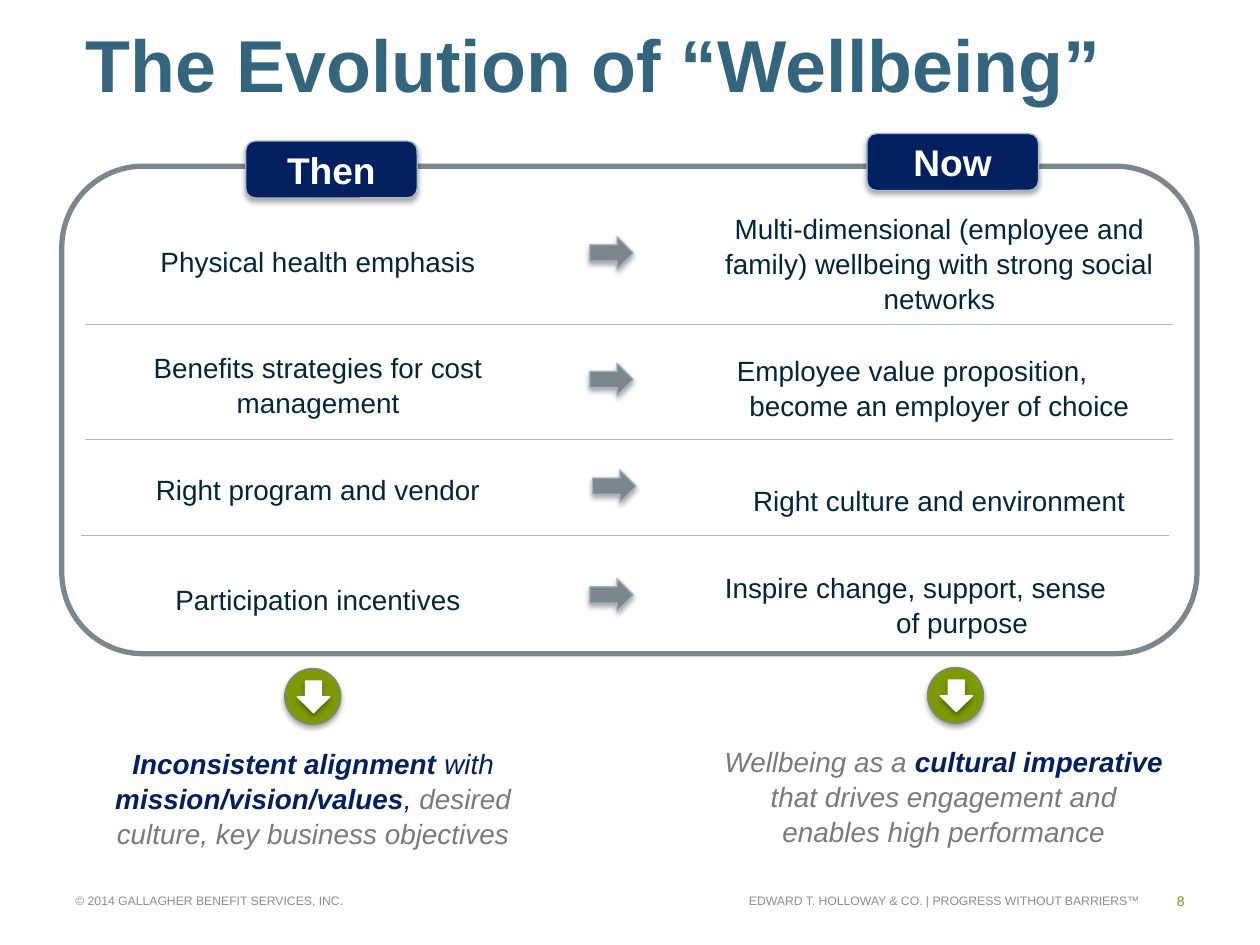
from lxml import etree
from pptx import Presentation
from pptx.dml.color import RGBColor
from pptx.enum.shapes import MSO_CONNECTOR, MSO_SHAPE
from pptx.enum.text import MSO_ANCHOR, PP_ALIGN
from pptx.oxml.ns import qn
from pptx.util import Pt

LEFT, CENTER, RIGHT = PP_ALIGN.LEFT, PP_ALIGN.CENTER, PP_ALIGN.RIGHT
TOP, MIDDLE = MSO_ANCHOR.TOP, MSO_ANCHOR.MIDDLE
ROUNDED, OVAL = MSO_SHAPE.ROUNDED_RECTANGLE, MSO_SHAPE.OVAL
DOWN_ARROW, RIGHT_ARROW = MSO_SHAPE.DOWN_ARROW, MSO_SHAPE.RIGHT_ARROW
STRAIGHT = MSO_CONNECTOR.STRAIGHT

NAVY, INK, GRAY, STEEL = "002060", "00263E", "7A7A7A", "7C868D"
TEAL, PALE, GREEN, WHITE = "34657F", "A6BBC9", "7C9A05", "FFFFFF"
FOOTER, PAGE_GREEN, ARROW_EDGE = "8C8E92", "799A05", "A1B7C5"


def color(value):
    return RGBColor.from_string(value)


class SlideBuilder:
    font = "Arial"
    body_size = 15.9
    body_spacing = 1.05

    def __init__(self, slide):
        self.slide = slide

    def style(self, font, size, value, bold=False, italic=False):
        font.name, font.size = self.font, Pt(size)
        font.color.rgb = color(value)
        font.bold, font.italic = bold, italic

    def frame(self, box, anchor=TOP):
        shape = self.slide.shapes.add_textbox(*map(Pt, box))
        text_frame = shape.text_frame
        text_frame.word_wrap = True
        text_frame.vertical_anchor = anchor
        return text_frame

    def label(self, box, text, size, value, align=LEFT):
        paragraph = self.frame(box, MIDDLE).paragraphs[0]
        paragraph.text = text
        paragraph.alignment = align
        self.style(paragraph.runs[0].font, size, value)

    def title(self, box, text):
        text_frame = self.frame(box, MIDDLE)
        text_frame.margin_left = Pt(4.3)
        text_frame.margin_right = text_frame.margin_top = text_frame.margin_bottom = 0
        text_frame.text = text
        self.style(text_frame.paragraphs[0].runs[0].font, 42, TEAL, bold=True)

    def column(self, box, entries):
        text_frame = self.frame(box)
        text_frame.text = "\n".join(entry[0] for entry in entries)
        for paragraph, (_, gap, left, right) in zip(text_frame.paragraphs, entries):
            properties = paragraph._p.get_or_add_pPr()
            properties.set("marL", str(Pt(left)))
            properties.set("marR", str(Pt(right)))
            paragraph.alignment = CENTER
            paragraph.line_spacing = self.body_spacing
            paragraph.space_before = Pt(gap)
            self.style(paragraph.runs[0].font, self.body_size, INK)

    def summary(self, box, runs):
        paragraph = self.frame(box).paragraphs[0]
        paragraph.alignment = CENTER
        paragraph.line_spacing = self.body_spacing
        for text, value, bold in runs:
            run = paragraph.add_run()
            run.text = text
            self.style(run.font, self.body_size, value, bold, italic=True)

    def shape(self, kind, box, fill, edge, width=0.75, shadow=True):
        shape = self.slide.shapes.add_shape(kind, *map(Pt, box))
        if fill:
            shape.fill.solid()
            shape.fill.fore_color.rgb = color(fill)
        else:
            shape.fill.background()
        shape.line.color.rgb = color(edge)
        shape.line.width = Pt(width)
        shape.shadow.inherit = False
        if shadow:
            self.drop_shadow(shape)
        return shape

    def drop_shadow(self, shape):
        effects = shape._element.spPr.find(qn("a:effectLst"))
        outer = etree.SubElement(effects, qn("a:outerShdw"), blurRad=str(Pt(3.1)),
                                 dist=str(Pt(1.8)), dir="5400000", rotWithShape="0")
        tint = etree.SubElement(outer, qn("a:srgbClr"), val="000000")
        etree.SubElement(tint, qn("a:alpha"), val="35000")

    def heading(self, left, top, text):
        shape = self.shape(ROUNDED, (left, top, 98, 32.5), NAVY, PALE)
        text_frame = shape.text_frame
        text_frame.margin_left = text_frame.margin_right = 0
        text_frame.vertical_anchor = MIDDLE
        text_frame.text = text
        text_frame.paragraphs[0].alignment = CENTER
        self.style(text_frame.paragraphs[0].runs[0].font, 21.2, WHITE, bold=True)

    def badge(self, left, top):
        self.shape(OVAL, (left, top, 32, 32), GREEN, STEEL)
        self.shape(DOWN_ARROW, (left + 7.2, top + 7.2, 18.5, 18), WHITE, WHITE)

    def divider(self, left, top):
        line = self.slide.shapes.add_connector(
            STRAIGHT, Pt(left), Pt(top), Pt(left + 622), Pt(top))
        line.line.color.rgb = color(PALE)
        line.line.width = Pt(0.5)
        etree.SubElement(line._element.spPr, qn("a:effectLst"))


def main():
    presentation = Presentation()
    presentation.slide_width, presentation.slide_height = Pt(720), Pt(540)
    builder = SlideBuilder(presentation.slides.add_slide(presentation.slide_layouts[6]))

    builder.title((44.6, 10, 647, 52.5), "The Evolution of “Wellbeing”")
    builder.shape(ROUNDED, (35.3, 95, 648.7, 278.6), None, STEEL, width=3, shadow=False)
    builder.heading(140.4, 80.6, "Then")
    builder.heading(495.4, 76.3, "Now")

    builder.column((37.4, 135.4, 288.7, 236), [
        ("Physical health emphasis", 0, 0, 0),
        ("Benefits strategies for cost management", 40.4, 0, 0),
        ("Right program and vendor", 29.8, 0, 0),
        ("Participation incentives", 42.6, 0, 0),
    ])
    builder.column((405.4, 116.6, 262.8, 266), [
        ("Multi-dimensional (employee and family) wellbeing with strong social networks", 0, 0, 0),
        ("Employee value proposition,", 21.2, 0, 31),
        ("become an employer of choice", 0, 0, 0),
        ("Right culture and environment", 34, 0, 0),
        ("Inspire change, support, sense", 29.8, 0, 27),
        ("of purpose", 0, 26, 0),
    ])

    for left, top in ((48.5, 185.5), (48.5, 251.2), (46.2, 306)):
        builder.divider(left, top)
    for left, top in ((337, 135.2), (337, 207.5), (338.6, 268.5), (337, 330.6)):
        builder.shape(RIGHT_ARROW, (left, top, 25, 18.7), STEEL, ARROW_EDGE)

    builder.badge(162.7, 382)
    builder.badge(530, 381.4)
    builder.summary((49.7, 421.9, 258.5, 65), [
        ("Inconsistent alignment ", NAVY, True),
        ("with ", NAVY, False),
        ("mission/vision/values", NAVY, True),
        (", ", NAVY, False),
        ("desired culture, key business objectives", GRAY, False),
    ])
    builder.summary((405.4, 421.2, 267.8, 65), [
        ("Wellbeing as a ", GRAY, False),
        ("cultural imperative ", NAVY, True),
        ("that drives engagement and enables high performance", GRAY, False),
    ])

    builder.label((36, 500.4, 326, 28.8), "© 2014 GALLAGHER BENEFIT SERVICES, INC.", 7, FOOTER)
    builder.label((362.2, 500.4, 296, 28.8),
                  "EDWARD T. HOLLOWAY & CO. | PROGRESS WITHOUT BARRIERS™", 7, FOOTER, RIGHT)
    builder.label((658.8, 500.4, 25.2, 28.8), "8", 8, PAGE_GREEN, RIGHT)

    presentation.save("out.pptx")


if __name__ == "__main__":
    main()
